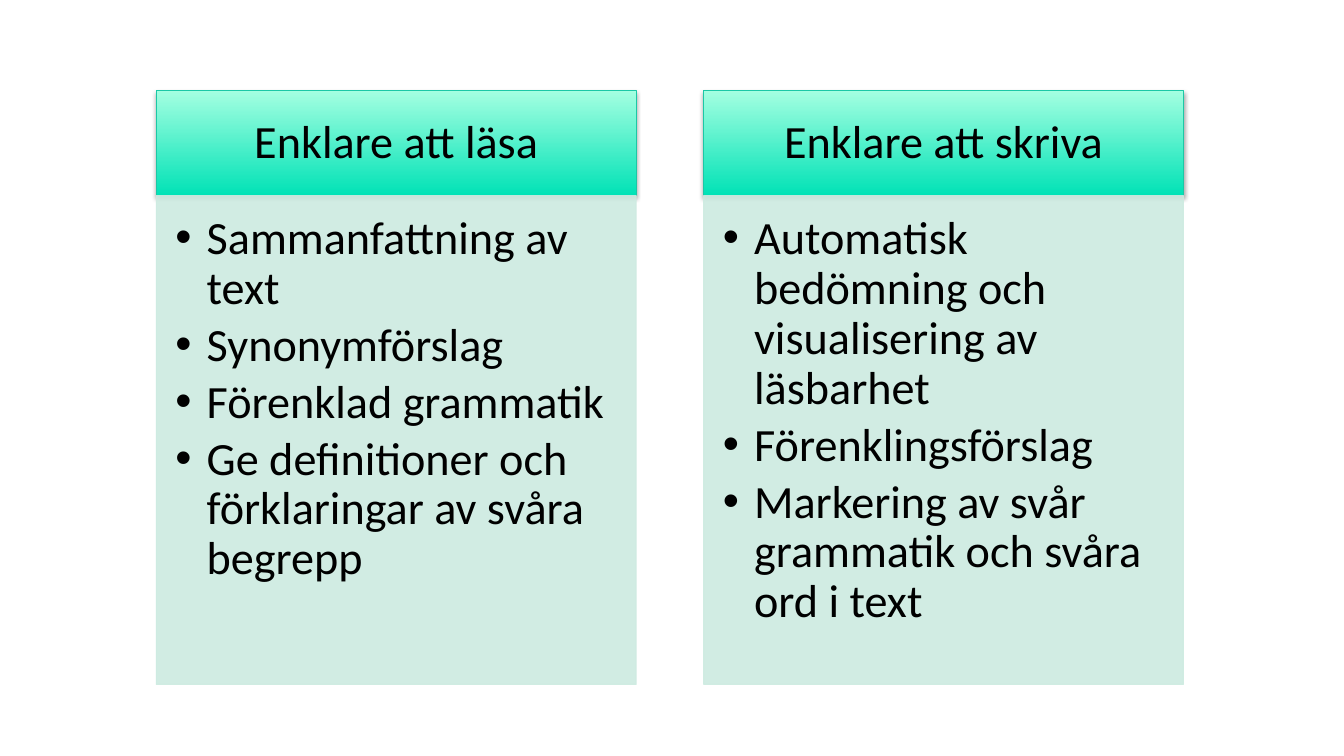
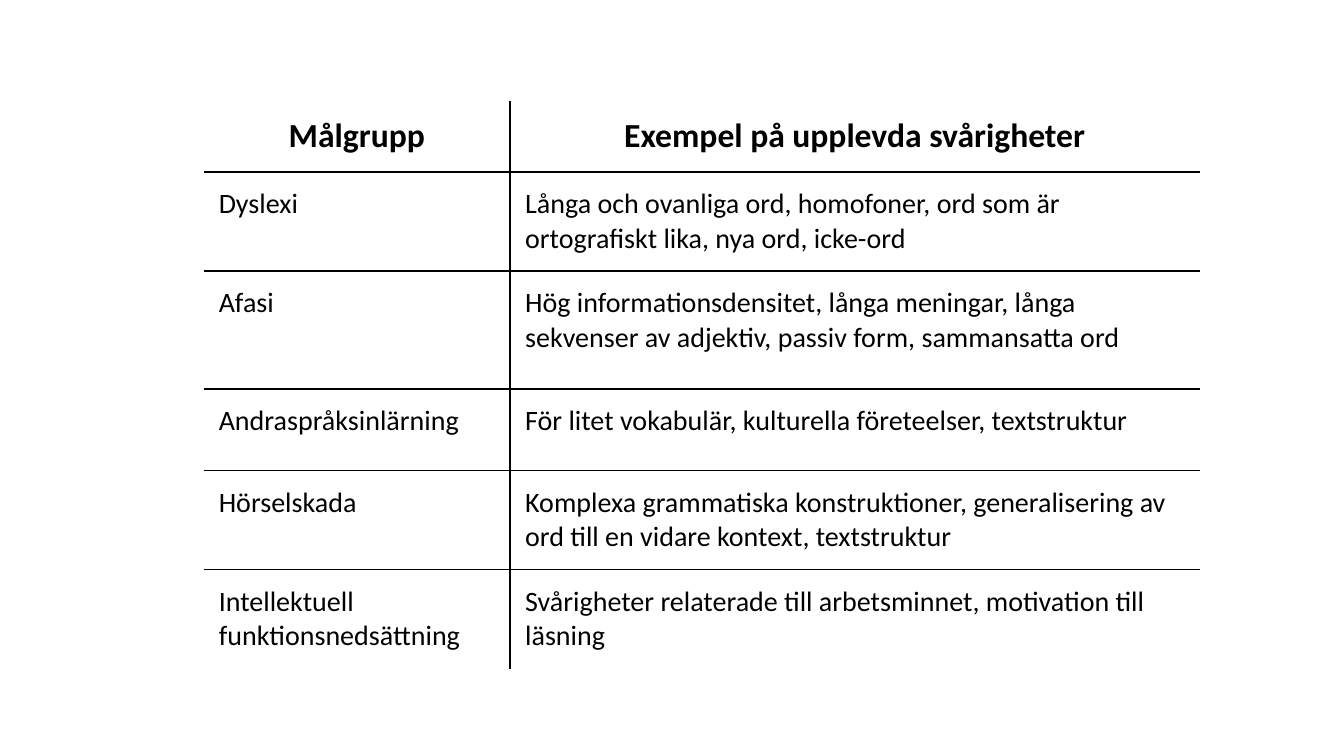
from lxml.etree import SubElement as Sub
from pptx import Presentation
from pptx.dml.color import RGBColor as RGB
from pptx.enum.shapes import MSO_SHAPE as Shape
from pptx.enum.text import MSO_ANCHOR as Anchor, PP_ALIGN as Align
from pptx.oxml.ns import qn
from pptx.util import Inches, Pt

BLACK = RGB(0x00, 0x00, 0x00)
DEEP = RGB(0x01, 0xE2, 0xB6)
LIGHT = RGB(0xA4, 0xFF, 0xE1)
EDGE = RGB(0x1B, 0xC8, 0xA6)
PALE = RGB(0xCD, 0xEB, 0xE1)
FONT = "Calibri"

deck = Presentation()
deck.slide_width, deck.slide_height = Inches(13.33), Inches(7.5)
blank = deck.slide_layouts[6]


def area(left, top, width, height):
    """Turn percentages of the slide into a place and a size."""
    wide, high = deck.slide_width / 100, deck.slide_height / 100
    return int(left * wide), int(top * high), int(width * wide), int(height * high)


def style(para, size, bold=False, align=Align.LEFT):
    para.alignment = align
    font = para.font
    font.name, font.size, font.bold = FONT, Pt(size), bold
    font.color.rgb = BLACK


# Slide 1: two lists, each under a heading
LISTS = [
    ("Enklare att läsa", [
        "Sammanfattning av text",
        "Synonymförslag",
        "Förenklad grammatik",
        "Ge definitioner och förklaringar av svåra begrepp",
    ]),
    ("Enklare att skriva", [
        "Automatisk bedömning och visualisering av läsbarhet",
        "Förenklingsförslag",
        "Markering av svår grammatik och svåra ord i text",
    ]),
]
LEFT, STEP, WIDTH = 11.63, 40.73, 35.7
TOP, HEAD, BODY = 12, 13.87, 64.67

slide = deck.slides.add_slide(blank)
for col, (title, items) in enumerate(LISTS):
    left = LEFT + col * STEP

    # Heading with gradient and soft shadow
    head = slide.shapes.add_shape(Shape.RECTANGLE, *area(left, TOP, WIDTH, HEAD))
    head.fill.gradient()
    head.fill.gradient_angle = 90
    for stop, color in zip(head.fill.gradient_stops, (DEEP, LIGHT)):
        stop.color.rgb = color
    head.line.color.rgb, head.line.width = EDGE, Pt(0.75)
    head.shadow.inherit = False
    effects = head._element.spPr.find(qn("a:effectLst"))
    shadow = Sub(effects, qn("a:outerShdw"), blurRad=str(Pt(3.1)),
                 dist=str(Pt(1.8)), dir="5400000", rotWithShape="0")
    tint = Sub(shadow, qn("a:srgbClr"), val=str(BLACK))
    Sub(tint, qn("a:alpha"), val="35000")
    frame = head.text_frame
    frame.word_wrap, frame.vertical_anchor = True, Anchor.MIDDLE
    para = frame.paragraphs[0]
    para.text, para.line_spacing = title, 0.9
    style(para, 33, align=Align.CENTER)

    # Panel, slightly see-through
    panel = slide.shapes.add_shape(Shape.RECTANGLE, *area(left, TOP + HEAD, WIDTH, BODY))
    panel.shadow.inherit = False
    panel.fill.solid()
    panel.fill.fore_color.rgb = PALE
    panel.line.color.rgb, panel.line.width = PALE, Pt(0.75)
    for tint in panel._element.spPr.iter(qn("a:srgbClr")):
        Sub(tint, qn("a:alpha"), val="90000")

    # Bulleted items
    frame = panel.text_frame
    frame.word_wrap, frame.vertical_anchor = True, Anchor.TOP
    frame.margin_left = frame.margin_top = Inches(0.19)
    frame.margin_right, frame.margin_bottom = Inches(0.26), Inches(0.29)
    for num, item in enumerate(items):
        para = frame.add_paragraph() if num else frame.paragraphs[0]
        para.text, para.line_spacing, para.space_after = item, 0.9, Pt(5)
        style(para, 33)
        props = para._p.get_or_add_pPr()
        props.set("marL", str(Inches(0.31)))
        props.set("indent", str(-Inches(0.31)))
        bullet = Sub(props, qn("a:buChar"), char="•")
        bullet.addprevious(props.makeelement(qn("a:buFont"), typeface="Arial"))
        # Default run properties come after the bullet
        props.append(props.find(qn("a:defRPr")))

# Slide 2: table ruled on the inside only
ROWS = [
    ("Målgrupp", "Exempel på upplevda svårigheter"),
    ("Dyslexi", "Långa och ovanliga ord, homofoner, ord som är "
                "ortografiskt lika, nya ord, icke-ord"),
    ("Afasi", "Hög informationsdensitet, långa meningar, långa "
              "sekvenser av adjektiv, passiv form, sammansatta ord"),
    ("Andraspråksinlärning",
     "För litet vokabulär, kulturella företeelser, textstruktur"),
    ("Hörselskada", "Komplexa grammatiska konstruktioner, generalisering av "
                    "ord till en vidare kontext, textstruktur"),
    ("Intellektuell funktionsnedsättning",
     "Svårigheter relaterade till arbetsminnet, motivation till läsning"),
]
COLS = [22.8, 51.3]
HIGHS = [9.4, 13.1, 15.6, 10.8, 13.1, 13.1]

slide = deck.slides.add_slide(blank)
place = area(15.15, 13.33, sum(COLS), sum(HIGHS))
table = slide.shapes.add_table(len(ROWS), len(COLS), *place).table
table.first_row = table.horz_banding = False
for col, share in zip(table.columns, COLS):
    col.width = area(0, 0, share, 0)[2]
for row, share in zip(table.rows, HIGHS):
    row.height = area(0, 0, 0, share)[3]

last = len(ROWS) - 1
for r, texts in enumerate(ROWS):
    for c, text in enumerate(texts):
        cell = table.cell(r, c)
        cell.margin_left = cell.margin_right = Inches(0.15)
        cell.margin_top = cell.margin_bottom = Inches(0.15)
        para = cell.text_frame.paragraphs[0]
        para.text = text
        if r == 0:
            style(para, 24, True, Align.CENTER)
        else:
            style(para, 20)

        # Inner borders, then no fill
        props = cell._tc.get_or_add_tcPr()
        sides = {"lnL": c > 0, "lnR": c == 0, "lnT": r > 0, "lnB": r < last}
        for side, shown in sides.items():
            rule = Sub(props, qn("a:" + side), w=str(Pt(1)))
            if shown:
                Sub(Sub(rule, qn("a:solidFill")), qn("a:srgbClr"), val=str(BLACK))
            else:
                Sub(rule, qn("a:noFill"))
        cell.fill.background()

deck.save("out.pptx")
